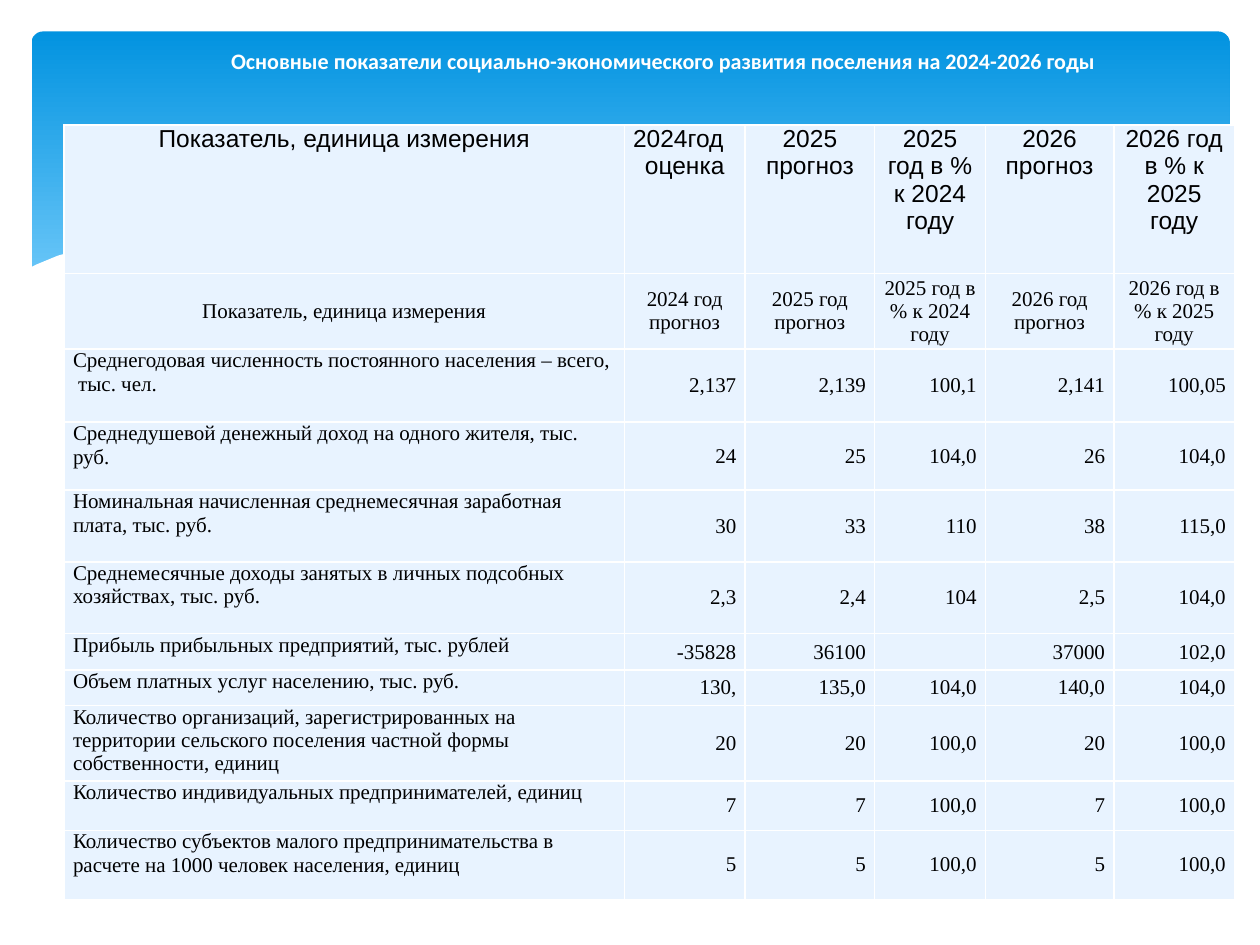
from lxml import etree
from pptx import Presentation
from pptx import util as u
from pptx.dml.color import RGBColor
from pptx.enum import shapes, text
from pptx.oxml.ns import qn

WIDTH, HEIGHT = u.Inches(10), u.Inches(7.5)
COLORS = {"sky_top": "0293E0", "sky_bottom": "83D3FE", "white": "FFFFFF",
          "cell": "E8F3FF", "ink": "000000"}
LEFT, CENTER, RIGHT = text.PP_ALIGN.LEFT, text.PP_ALIGN.CENTER, text.PP_ALIGN.RIGHT
TOP, MIDDLE = text.MSO_ANCHOR.TOP, text.MSO_ANCHOR.MIDDLE

# Lower edge of the blue panel, in percent of the wave's box
WAVE = [(100, 43), (95, 54), (89, 61), (82, 64), (74, 61), (63, 51), (53, 38),
        (44, 25), (36, 12), (28, 4), (22, 1), (16, 0), (11.4, 1.4), (7.5, 4.8),
        (4.6, 9), (2.4, 13.1), (0.63, 17.9), (0, 20), (0, 100), (100, 100)]

COLUMNS = [4.45, 0.96, 1.03, 0.88, 1.02, 0.96]
ROWS = [1.18, 0.56, 0.58, 0.54, 0.57, 0.57, 0.29, 0.28, 0.6, 0.39, 0.55]
INDICATORS = [
    ["Показатель, единица измерения", "2024год\nоценка", "2025\nпрогноз",
     "2025 год в % к 2024 году", "2026\nпрогноз", "2026 год в % к 2025 году"],
    ["Показатель, единица измерения", "2024 год\nпрогноз", "2025 год\nпрогноз",
     "2025 год в % к 2024 году", "2026 год\nпрогноз", "2026 год в % к 2025 году"],
    ["Среднегодовая численность постоянного населения – всего,  тыс. чел.",
     "2,137", "2,139", "100,1", "2,141", "100,05"],
    ["Среднедушевой денежный доход на одного жителя, тыс. руб.",
     "24", "25", "104,0", "26", "104,0"],
    ["Номинальная начисленная среднемесячная заработная плата, тыс. руб.",
     "30", "33", "110", "38", "115,0"],
    ["Среднемесячные доходы занятых в личных подсобных хозяйствах, тыс. руб.",
     "2,3", "2,4", "104", "2,5", "104,0"],
    ["Прибыль прибыльных предприятий, тыс. рублей",
     "-35828", "36100", "", "37000", "102,0"],
    ["Объем платных услуг населению, тыс. руб.",
     "130,", "135,0", "104,0", "140,0", "104,0"],
    ["Количество организаций, зарегистрированных на территории сельского "
     "поселения частной формы собственности, единиц",
     "20", "20", "100,0", "20", "100,0"],
    ["Количество индивидуальных предпринимателей, единиц",
     "7", "7", "100,0", "7", "100,0"],
    ["Количество субъектов малого предпринимательства в расчете на 1000 "
     "человек населения, единиц", "5", "5", "100,0", "5", "100,0"],
]


def color(name):
    return RGBColor.from_string(COLORS[name])


def share(left, top, width, height):
    """Box in EMU from percentages of the slide."""
    return [round(size * part / 100) for size, part in
            zip((WIDTH, HEIGHT, WIDTH, HEIGHT), (left, top, width, height))]


def style(paragraph, font, size, ink, align, bold=False):
    paragraph.alignment = align
    for run in paragraph.runs:
        run.font.name, run.font.size, run.font.bold = font, u.Pt(size), bold
        run.font.color.rgb = color(ink)
    if not paragraph.runs:
        etree.SubElement(paragraph._p, qn("a:endParaRPr"), sz=str(size * 100))


def add_panel(slide, box):
    panel = slide.shapes.add_shape(shapes.MSO_SHAPE.ROUNDED_RECTANGLE, *box)
    panel.adjustments[0] = 0.034
    panel.shadow.inherit = False
    panel.line.fill.background()
    panel.fill.gradient()
    panel.fill.gradient_angle = 270
    stops = zip(panel.fill.gradient_stops, ("sky_top", "sky_bottom"), (0, 0.9))
    for stop, name, position in stops:
        stop.color.rgb = color(name)
        stop.position = position


def add_wave(slide, box):
    left, top, width, height = box
    points = [(left + width * x / 100, top + height * y / 100) for x, y in WAVE]
    builder = slide.shapes.build_freeform(*points[0])
    builder.add_line_segments(points[1:], close=True)
    wave = builder.convert_to_shape()
    wave.shadow.inherit = False
    wave.fill.solid()
    wave.fill.fore_color.rgb = color("white")
    wave.line.fill.background()


def add_title(slide, box):
    frame = slide.shapes.add_textbox(*box).text_frame
    frame.word_wrap = True
    frame.margin_top = u.Inches(0.08)
    frame.text = ("Основные показатели социально-экономического развития "
                  "поселения на 2024-2026 годы")
    style(frame.paragraphs[0], "Calibri", 12.6, "white", CENTER, bold=True)


def add_borders(cell):
    properties = cell._tc.get_or_add_tcPr()
    for side in ("a:lnL", "a:lnR", "a:lnT", "a:lnB"):
        line = etree.SubElement(properties, qn(side), w=str(u.Pt(1)))
        fill = etree.SubElement(line, qn("a:solidFill"))
        etree.SubElement(fill, qn("a:srgbClr"), val=COLORS["white"])


def fill_cell(cell, content, row, column):
    add_borders(cell)
    cell.fill.solid()
    cell.fill.fore_color.rgb = color("cell")
    cell.margin_left = cell.margin_right = u.Inches(0.07)
    cell.margin_top = cell.margin_bottom = 0
    is_label = column == 0 and row > 1
    cell.vertical_anchor = TOP if row == 0 or is_label else MIDDLE
    cell.text_frame.text = content
    align = CENTER if row < 2 else LEFT if is_label else RIGHT
    font, size = ("Arial", 14) if row == 0 else ("Times New Roman", 12)
    for paragraph in cell.text_frame.paragraphs:
        style(paragraph, font, size, "ink", align)


def add_indicators(slide, box):
    table = slide.shapes.add_table(len(ROWS), len(COLUMNS), *box).table
    table.first_row = table.horz_banding = False
    for column, weight in zip(table.columns, COLUMNS):
        column.width = round(box[2] * weight / sum(COLUMNS))
    for row, weight in zip(table.rows, ROWS):
        row.height = round(box[3] * weight / sum(ROWS))
    for r, contents in enumerate(INDICATORS):
        for c, content in enumerate(contents):
            fill_cell(table.cell(r, c), content, r, c)
    # The first year in the header starts at the left edge
    table.cell(0, 1).text_frame.paragraphs[0].alignment = LEFT


def main():
    deck = Presentation()
    deck.slide_width, deck.slide_height = WIDTH, HEIGHT
    slide = deck.slides.add_slide(deck.slide_layouts[6])
    # Background
    add_panel(slide, share(2.5, 3.33, 95.1, 36))
    add_wave(slide, share(2.3, 24.53, 95.4, 19.33))
    # Content
    add_title(slide, share(10.2, 4, 84.8, 7.47))
    add_indicators(slide, share(5.1, 13.2, 92.9, 81.47))
    deck.save("out.pptx")


if __name__ == "__main__":
    main()
